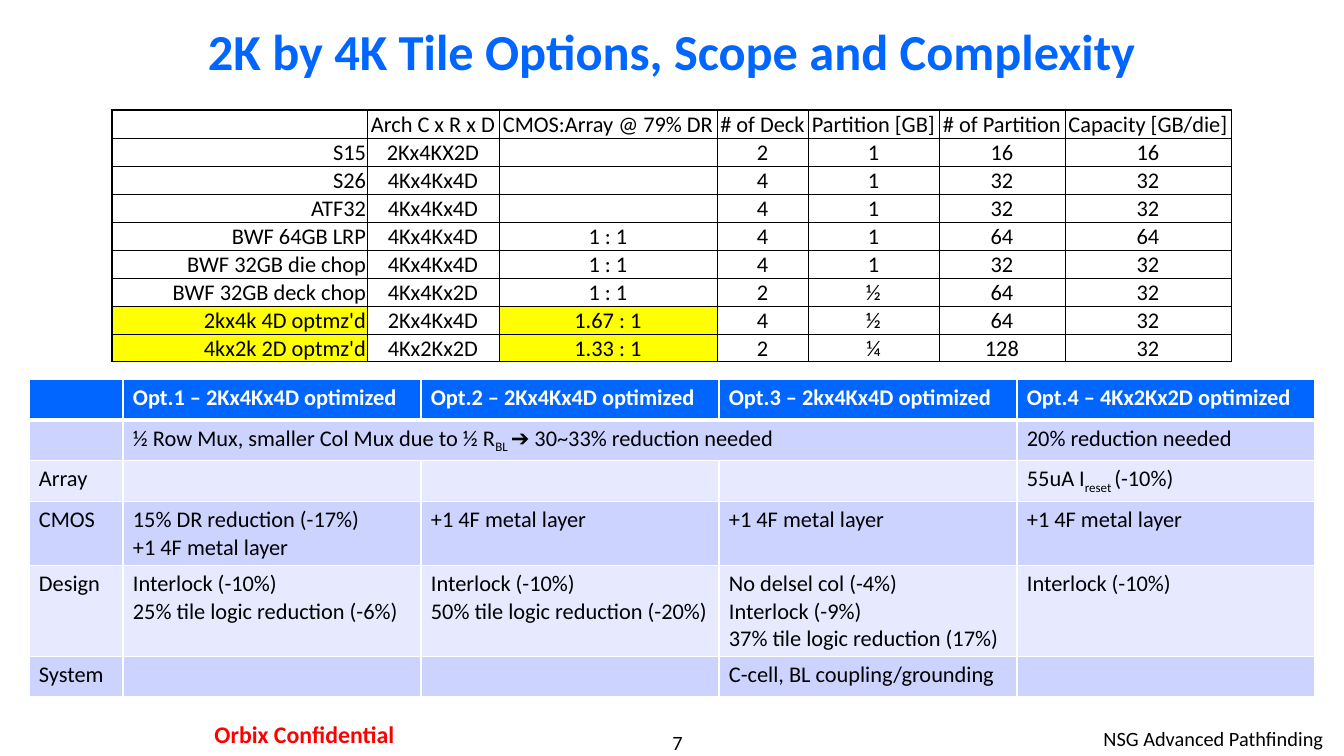
from lxml import etree
from pptx import Presentation
from pptx.dml.color import RGBColor
from pptx.enum.text import MSO_ANCHOR, PP_ALIGN
from pptx.oxml.ns import qn
from pptx.util import Pt

LEFT, CENTER, RIGHT = PP_ALIGN.LEFT, PP_ALIGN.CENTER, PP_ALIGN.RIGHT
TOP, MIDDLE, BOTTOM = MSO_ANCHOR.TOP, MSO_ANCHOR.MIDDLE, MSO_ANCHOR.BOTTOM
PX = 914400 / 100.8
COLORS = {"blue": "0066FF", "black": "000000", "white": "FFFFFF", "red": "FF0000",
          "yellow": "FFFF00", "band": "CCD3FF", "light": "E7EAFF"}


def px(*lengths):
    return [round(n * PX) for n in lengths]


def write(tf, text, size, color, align, bold=False):
    """Write lines split by newlines; parts between underscores are subscripts."""
    for i, line in enumerate(text.split("\n")):
        p = tf.add_paragraph() if i else tf.paragraphs[0]
        p.alignment = align
        p.font.name, p.font.size, p.font.bold = "Calibri", Pt(size), bold
        p.font.color.rgb = RGBColor.from_string(COLORS[color])
        for j, part in enumerate(line.split("_")):
            if part:
                r = p.add_run()
                r.text = part
                if j % 2:
                    r._r.get_or_add_rPr().set("baseline", "-25000")


prs = Presentation()
prs.slide_width, prs.slide_height = px(1344, 756)
s = prs.slides.add_slide(prs.slide_layouts[5])

# Title
title = s.shapes.title
title.left, title.top, title.width, title.height = px(101, 29, 1142, 42)
title.text_frame.vertical_anchor = MIDDLE
write(title.text_frame, "2K by 4K Tile Options, Scope and Complexity", 36, "blue", CENTER, True)

# Footer: text, box, margins (horizontal, vertical), size, color, alignment, bold
FOOTERS = [
    ("7", (560, 730, 235, 24), (0, 0), 14.5, "black", CENTER, False),
    ("NSG Advanced Pathfinding", (890, 721, 443, 35), (10, 5), 14.5, "black", RIGHT, False),
    ("Orbix Confidential", (156, 714, 297, 41), (12, 6), 17, "red", CENTER, True),
]
for text, box, (mx, my), size, color, align, bold in FOOTERS:
    tf = s.shapes.add_textbox(*px(*box)).text_frame
    tf.word_wrap = True
    tf.margin_left, tf.margin_right, tf.margin_top, tf.margin_bottom = px(mx, mx, my, my)
    write(tf, text, size, color, align, bold)

# Table contents
OPTIONS = [
    ["", "Arch C x R x D", "CMOS:Array @ 79% DR", "# of Deck", "Partition [GB]",
     "# of Partition", "Capacity [GB/die]"],
    ["S15", "2Kx4KX2D", "", "2", "1", "16", "16"],
    ["S26", "4Kx4Kx4D", "", "4", "1", "32", "32"],
    ["ATF32", "4Kx4Kx4D", "", "4", "1", "32", "32"],
    ["BWF 64GB LRP", "4Kx4Kx4D", "1 : 1", "4", "1", "64", "64"],
    ["BWF 32GB die chop", "4Kx4Kx4D", "1 : 1", "4", "1", "32", "32"],
    ["BWF 32GB deck chop", "4Kx4Kx2D", "1 : 1", "2", "½", "64", "32"],
    ["2kx4k 4D optmz'd", "2Kx4Kx4D", "1.67 : 1", "4", "½", "64", "32"],
    ["4kx2k 2D optmz'd", "4Kx2Kx2D", "1.33 : 1", "2", "¼", "128", "32"],
]
METAL = "+1 4F metal layer"
SCOPE = [
    ["", "Opt.1 – 2Kx4Kx4D optimized", "Opt.2 – 2Kx4Kx4D optimized",
     "Opt.3 – 2kx4Kx4D optimized", "Opt.4 – 4Kx2Kx2D optimized"],
    ["", "½ Row Mux, smaller Col Mux due to ½ R_BL _➔ 30~33% reduction needed", "", "",
     "20% reduction needed"],
    ["Array", "", "", "", "55uA I_reset _(-10%)"],
    ["CMOS", "15% DR reduction (-17%)\n" + METAL, METAL, METAL, METAL],
    ["Design", "Interlock (-10%)\n25% tile logic reduction (-6%)",
     "Interlock (-10%)\n50% tile logic reduction (-20%)",
     "No delsel col (-4%)\nInterlock (-9%)\n37% tile logic reduction (17%)",
     "Interlock (-10%)"],
    ["System", "", "", "C-cell, BL coupling/grounding", ""],
]

# Tables: rows, place, column widths, row heights, margins (l, r, t, b), anchor
TABLES = [
    (SCOPE, (29, 379), [94] + [298] * 4, [41, 40, 41, 64, 91, 40], (10, 10, 5, 5), TOP),
    (OPTIONS, (112, 110), [255, 132, 218, 91, 131, 126, 166], [28] * 9, (1, 1, 1, 0), BOTTOM),
]
for rows, place, widths, heights, margins, anchor in TABLES:
    is_scope = rows is SCOPE
    last_row, last_col = len(rows) - 1, len(widths) - 1
    table = s.shapes.add_table(len(rows), len(widths),
                               *px(*place, sum(widths), sum(heights))).table
    table.first_row = table.horz_banding = False
    for col, width in zip(table.columns, px(*widths)):
        col.width = width
    for row, height in zip(table.rows, px(*heights)):
        row.height = height
    if is_scope:
        table.cell(1, 1).merge(table.cell(1, 3))

    for i, texts in enumerate(rows):
        for j, text in enumerate(texts):
            cell = table.cell(i, j)
            cell.margin_left, cell.margin_right, cell.margin_top, cell.margin_bottom = px(*margins)
            cell.vertical_anchor = anchor
            if is_scope:
                line, fill = "white", "blue" if i == 0 else "band" if i % 2 else "light"
                color, align = "white" if i == 0 else "black", LEFT
                borders = {"L": 1, "R": 1, "T": 3 if i == 1 else 1, "B": 3 if i == 0 else 1}
            else:
                line, fill = "black", "yellow" if i >= 7 and j in (0, 2) else "white"
                color, align = "black", CENTER if j else RIGHT
                borders = {"L": 0.5 if j else 1, "R": 0.5,
                           "T": 0.5 if i else 1, "B": 1 if i == last_row else 0.5}
            write(cell.text_frame, text, 16, color, align, is_scope and i == 0)

            # Borders come before the fill in the cell properties
            tcPr = cell._tc.get_or_add_tcPr()
            for side, points in borders.items():
                ln = etree.SubElement(tcPr, qn("a:ln" + side), w=str(Pt(points)))
                solid = etree.SubElement(ln, qn("a:solidFill"))
                etree.SubElement(solid, qn("a:srgbClr"), val=COLORS[line])
            cell.fill.solid()
            cell.fill.fore_color.rgb = RGBColor.from_string(COLORS[fill])

prs.save("out.pptx")
